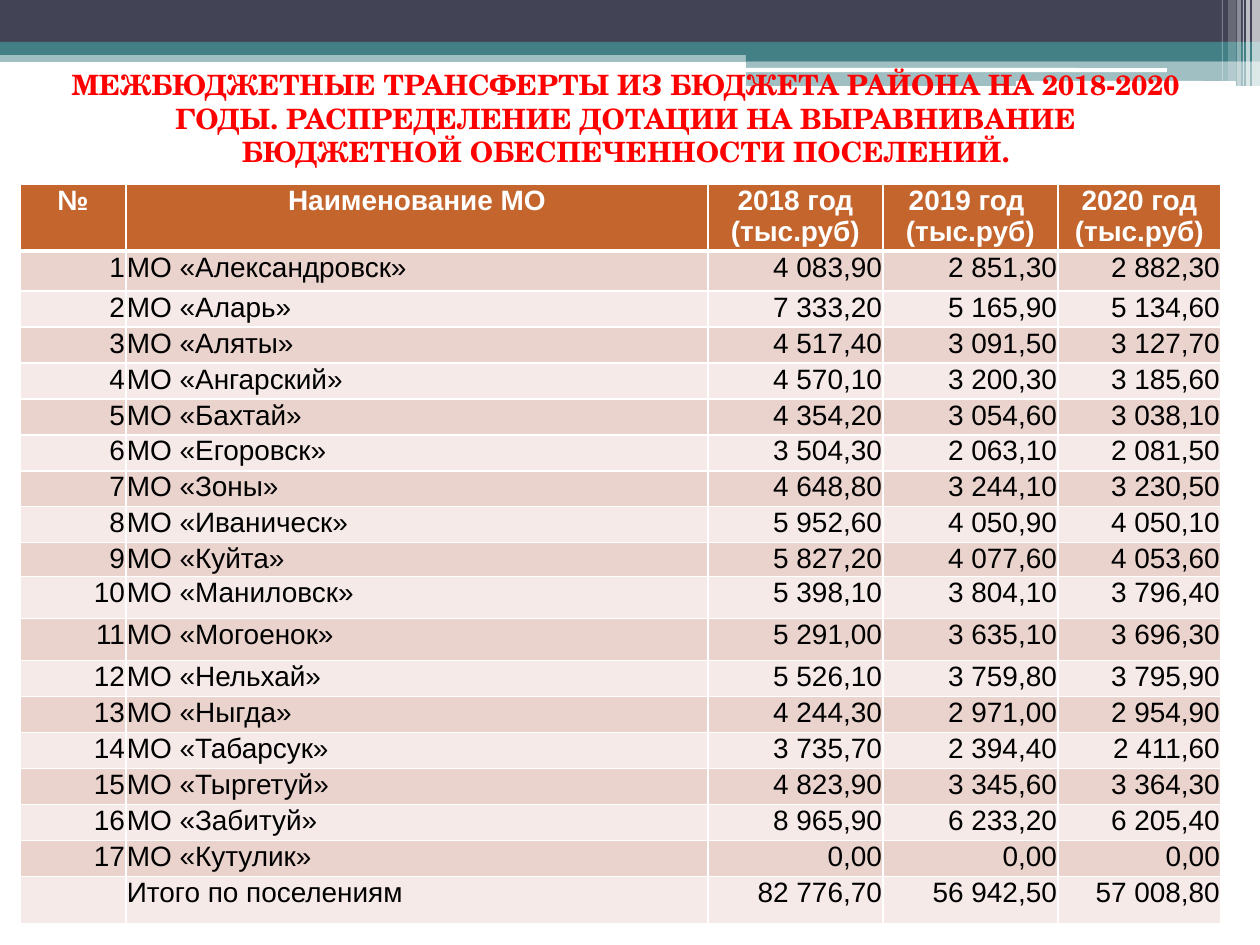
from lxml import etree
from pptx import Presentation, util as u
from pptx.dml.color import RGBColor
from pptx.enum import shapes, text
from pptx.oxml import ns

SCALE = 914400 / 126  # EMU per px
WHITE, NAVY, TEAL = "FFFFFF", "424456", "438086"
HEADER_FILL, BAND_FILLS = "C4652D", ("EAD3CD", "F5EAE8")


def px(length):
    return u.Emu(round(length * SCALE))


def write(paragraph, content, size=16, font="Arial", color="000000", bold=False,
          align=text.PP_ALIGN.LEFT):
    paragraph.text = content
    paragraph.alignment = align
    paragraph.font.size = u.Pt(size)
    paragraph.font.name = font
    paragraph.font.bold = bold
    paragraph.font.color.rgb = RGBColor.from_string(color)


presentation = Presentation()
presentation.slide_width, presentation.slide_height = px(1260), px(945)
slide = presentation.slides.add_slide(presentation.slide_layouts[5])

# Decorative bands: left, top, width, height, colour, opacity %, rounded
bands = [
    (0, 50, 1260, 12, TEAL, 50, False),
    (0, 0, 1260, 43, NAVY, 100, False),
    (0, 42, 1260, 13, TEAL, 100, False),
    (746, 49, 514, 12, TEAL, 100, False),
    (746, 61, 514, 25, TEAL, 50, False),
    (745, 68, 422, 4, WHITE, 100, True),
    (1016, 81, 220, 5, WHITE, 100, True),
    (1252, 0, 8, 86, WHITE, 65, False),
    (1246, 0, 4, 86, WHITE, 65, False),
    (1243, 0, 1, 86, WHITE, 60, False),
    (1237, 0, 4, 86, WHITE, 40, False),
    (1228, 0, 8, 81, WHITE, 20, False),
    (1222, 0, 1, 81, WHITE, 30, False),
]
for left, top, width, height, color, opacity, rounded in bands:
    preset = shapes.MSO_SHAPE.ROUNDED_RECTANGLE if rounded else shapes.MSO_SHAPE.RECTANGLE
    band = slide.shapes.add_shape(preset, px(left), px(top), px(width), px(height))
    band.shadow.inherit = False
    band.line.fill.background()
    band.fill.solid()
    band.fill.fore_color.rgb = RGBColor.from_string(color)
    if opacity < 100:
        color_element = band.element.spPr.find(".//" + ns.qn("a:srgbClr"))
        etree.SubElement(color_element, ns.qn("a:alpha"), val=str(opacity * 1000))

# Title, in front of the bands
title = slide.shapes.title
slide.shapes.element.append(title.element)
title.left, title.top, title.width, title.height = px(59), px(59), px(1134), px(118)
title.text_frame.word_wrap = True
title.text_frame.auto_size = text.MSO_AUTO_SIZE.NONE
title.text_frame.vertical_anchor = text.MSO_ANCHOR.MIDDLE
write(title.text_frame.paragraphs[0],
      "МЕЖБЮДЖЕТНЫЕ ТРАНСФЕРТЫ ИЗ БЮДЖЕТА РАЙОНА НА 2018-2020 ГОДЫ. "
      "РАСПРЕДЕЛЕНИЕ ДОТАЦИИ НА ВЫРАВНИВАНИЕ БЮДЖЕТНОЙ ОБЕСПЕЧЕННОСТИ ПОСЕЛЕНИЙ.",
      font="TeX Gyre Schola", color="FF0000", bold=True, align=text.PP_ALIGN.CENTER)

# Table content
grants = [
    ("Александровск", "4 083,90", "2 851,30", "2 882,30"),
    ("Аларь", "7 333,20", "5 165,90", "5 134,60"),
    ("Аляты", "4 517,40", "3 091,50", "3 127,70"),
    ("Ангарский", "4 570,10", "3 200,30", "3 185,60"),
    ("Бахтай", "4 354,20", "3 054,60", "3 038,10"),
    ("Егоровск", "3 504,30", "2 063,10", "2 081,50"),
    ("Зоны", "4 648,80", "3 244,10", "3 230,50"),
    ("Иваническ", "5 952,60", "4 050,90", "4 050,10"),
    ("Куйта", "5 827,20", "4 077,60", "4 053,60"),
    ("Маниловск", "5 398,10", "3 804,10", "3 796,40"),
    ("Могоенок", "5 291,00", "3 635,10", "3 696,30"),
    ("Нельхай", "5 526,10", "3 759,80", "3 795,90"),
    ("Ныгда", "4 244,30", "2 971,00", "2 954,90"),
    ("Табарсук", "3 735,70", "2 394,40", "2 411,60"),
    ("Тыргетуй", "4 823,90", "3 345,60", "3 364,30"),
    ("Забитуй", "8 965,90", "6 233,20", "6 205,40"),
    ("Кутулик", "0,00", "0,00", "0,00"),
]
rows = [("№", "Наименование МО", "2018 год\n(тыс.руб)", "2019 год \n(тыс.руб)",
         "2020 год\n(тыс.руб)")]
rows += [(str(number), f"МО «{name}»", *amounts)
         for number, (name, *amounts) in enumerate(grants, 1)]
rows.append(("", "Итого по поселениям", "82 776,70", "56 942,50", "57 008,80"))

# Table grid
column_widths = [106, 582, 175, 175, 163]
row_heights = [67, 40] + [36] * 7 + [34, 42, 42] + [36] * 6 + [47]
table = slide.shapes.add_table(len(rows), len(column_widths), px(20), px(184),
                               px(sum(column_widths)), px(sum(row_heights))).table
for column, width in zip(table.columns, column_widths):
    column.width = px(width)
for row, height in zip(table.rows, row_heights):
    row.height = px(height)

# Table cells
for row_index, row in enumerate(rows):
    is_header = row_index == 0
    for column_index, content in enumerate(row):
        cell = table.cell(row_index, column_index)
        cell.margin_left = cell.margin_top = cell.margin_right = px(1)
        cell.margin_bottom = 0
        if is_header:
            style = {"color": WHITE, "bold": True, "align": text.PP_ALIGN.CENTER}
        elif column_index == 1:
            style = {}
        else:
            style = {"align": text.PP_ALIGN.RIGHT}
        for line_index, line in enumerate(content.split("\n")):
            frame = cell.text_frame
            paragraph = frame.add_paragraph() if line_index else frame.paragraphs[0]
            write(paragraph, line, **style)

        # White borders go before the fill, heavier under the header
        properties = cell._tc.get_or_add_tcPr()
        for side in ("L", "R", "T", "B"):
            heavy = (row_index, side) in ((0, "B"), (1, "T"))
            border = etree.SubElement(properties, ns.qn(f"a:ln{side}"),
                                      w=str(u.Pt(3 if heavy else 1)))
            border_fill = etree.SubElement(border, ns.qn("a:solidFill"))
            etree.SubElement(border_fill, ns.qn("a:srgbClr"), val=WHITE)
        cell.fill.solid()
        fill = HEADER_FILL if is_header else BAND_FILLS[(row_index - 1) % 2]
        cell.fill.fore_color.rgb = RGBColor.from_string(fill)

presentation.save("out.pptx")
